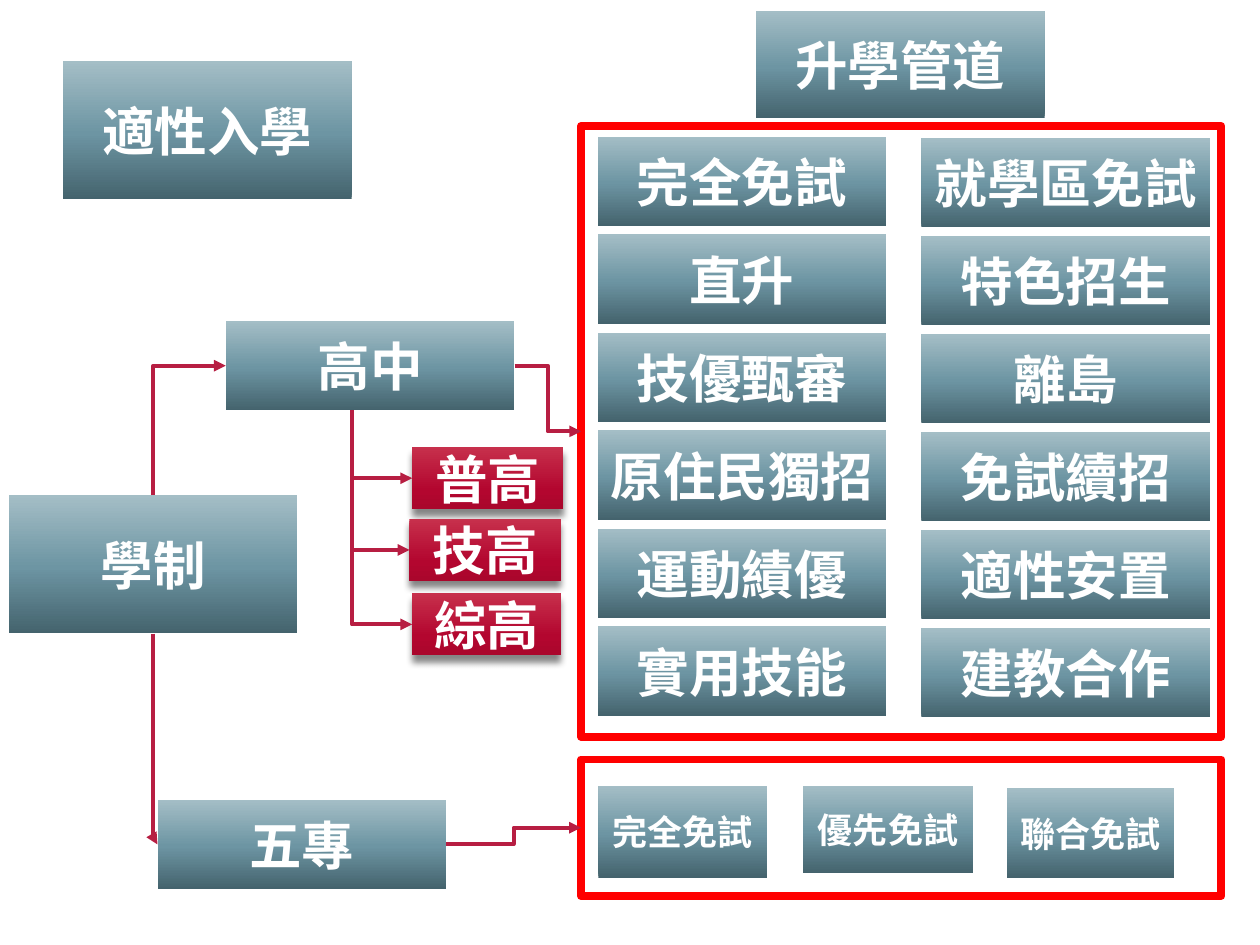
from dataclasses import dataclass

import pptx
import pptx.dml.color
import pptx.enum.shapes
import pptx.enum.text
import pptx.oxml
import pptx.oxml.ns
import pptx.util
from lxml import etree

Pt = pptx.util.Pt
qn = pptx.oxml.ns.qn
FONT = "Noto Sans CJK SC"
COLORS = {"text": "FFFFFF", "frame": "FF0000", "arrow": "B71E42", "shadow": "000000"}
GRADIENTS = {
    "teal": (90, ((0, "44636D"), (48, "6D95A3"), (100, "A4BEC6"))),
    "red": (270, ((0, "C7304C"), (69, "B3062F"), (100, "AA062C"))),
}


@dataclass(frozen=True)
class Box:
    text: str
    left: float
    top: float
    width: float = 165  # five 30-point characters plus the side insets
    height: float = 51
    size: int = 30
    gradient: str = "teal"

    @property
    def middle(self) -> float:
        return self.top + self.height / 2

    @property
    def center(self) -> float:
        return self.left + self.width / 2

    @property
    def bottom(self) -> float:
        return self.top + self.height


TITLE = Box("適性入學", 36, 35, height=79)
SYSTEM = Box("學制", 5, 283, height=79)
CHANNELS = Box("升學管道", 432, 6.5, height=61)
SENIOR_HIGH = Box("高中", 129, 183.5)
JUNIOR_COLLEGE = Box("五專", 90, 457)
SENIOR_FRAME = Box("", 332, 72, 366, 349)
COLLEGE_FRAME = Box("", 332, 434, 366, 78)
SCHOOL_TYPES = [
    Box("普高", 235.5, 255.5, 86.5, 35.5, gradient="red"),
    Box("技高", 234, 296.5, 86.5, 35.5, gradient="red"),
    Box("綜高", 235.5, 339, 85, 35.5, gradient="red"),
]
SENIOR_COLUMNS = [
    (341.5, 78, ["完全免試", "直升", "技優甄審", "原住民獨招", "運動績優", "實用技能"]),
    (526.5, 79, ["就學區免試", "特色招生", "離島", "免試續招", "適性安置", "建教合作"]),
]
ROW_PITCH = 56
COLLEGE_CHANNELS = [
    Box("完全免試", 342, 449, 96.5, 52.5, 20),
    Box("優先免試", 459, 449, 97, 50, 20),
    Box("聯合免試", 575.5, 450.5, 95.5, 51, 20),
]


def color(name: str) -> pptx.dml.color.RGBColor:
    return pptx.dml.color.RGBColor.from_string(COLORS[name])


def write_text(shape, text: str, *, size: int, bold: bool = True, fill: str = "text") -> None:
    frame = shape.text_frame
    frame.auto_size = pptx.enum.text.MSO_AUTO_SIZE.NONE
    frame.word_wrap = True
    frame.vertical_anchor = pptx.enum.text.MSO_ANCHOR.MIDDLE
    paragraph = frame.paragraphs[0]
    paragraph.alignment = pptx.enum.text.PP_ALIGN.CENTER
    run = paragraph.add_run()
    run.text = text
    run.font.size = Pt(size)
    run.font.bold = bold
    run.font.color.rgb = color(fill)
    run.font.name = FONT
    etree.SubElement(run._r.get_or_add_rPr(), qn("a:ea"), typeface=FONT)


def fill_gradient(shape, name: str) -> None:
    angle, stops = GRADIENTS[name]
    shape.fill.gradient()
    shape.fill.gradient_angle = angle
    stop_list = shape._element.spPr.find(qn("a:gradFill")).find(qn("a:gsLst"))
    for stop in list(stop_list):
        stop_list.remove(stop)
    for position, value in stops:
        stop = etree.SubElement(stop_list, qn("a:gs"), pos=str(position * 1000))
        etree.SubElement(stop, qn("a:srgbClr"), val=value)


def add_shadow(shape) -> None:
    effects = shape._element.spPr.find(qn("a:effectLst"))
    shadow = etree.SubElement(effects, qn("a:outerShdw"), blurRad=str(Pt(4)),
                              dist=str(Pt(4)), dir="5400000", rotWithShape="0")
    shade = etree.SubElement(shadow, qn("a:srgbClr"), val=COLORS["shadow"])
    etree.SubElement(shade, qn("a:alpha"), val="48000")


def add_rectangle(slide, box: Box):
    shape = slide.shapes.add_shape(
        pptx.enum.shapes.MSO_SHAPE.RECTANGLE,
        Pt(box.left), Pt(box.top), Pt(box.width), Pt(box.height))
    shape.shadow.inherit = False
    return shape


def format_box(shape, box: Box) -> None:
    fill_gradient(shape, box.gradient)
    shape.line.fill.background()
    write_text(shape, box.text, size=box.size)


def add_box(slide, box: Box):
    shape = add_rectangle(slide, box)
    format_box(shape, box)
    if box.gradient == "red":
        add_shadow(shape)
    return shape


def add_frame(slide, box: Box):
    shape = add_rectangle(slide, box)
    shape.fill.background()
    shape.line.color.rgb = color("frame")
    shape.line.width = Pt(4.5)
    return shape


def add_title(slide, box: Box) -> None:
    title = slide.shapes.title
    title.left, title.top = Pt(box.left), Pt(box.top)
    title.width, title.height = Pt(box.width), Pt(box.height)
    format_box(title, box)


def add_elbow(slide, x1: float, y1: float, x2: float, y2: float):
    connector = slide.shapes.add_connector(
        pptx.enum.shapes.MSO_CONNECTOR.ELBOW, Pt(x1), Pt(y1), Pt(x2), Pt(y2))
    connector.line.color.rgb = color("arrow")
    connector.line.width = Pt(2.25)
    properties = connector._element.spPr
    etree.SubElement(properties.find(qn("a:ln")), qn("a:tailEnd"), type="triangle")
    etree.SubElement(properties, qn("a:effectLst"))
    return connector


def add_step_arrow(slide, source, target) -> None:
    """Joins the right side of source to the left side of target."""
    connector = add_elbow(slide, 0, 0, 1, 1)
    connector.begin_connect(source, 3)
    connector.end_connect(target, 1)


def add_corner_arrow(slide, x1: float, y1: float, x2: float, y2: float) -> None:
    """Runs vertically from the start, then right to the end, as a turned one-bend connector."""
    center_x, center_y = (x1 + x2) / 2, (y1 + y2) / 2
    half_length, half_rise = abs(y2 - y1) / 2, (x2 - x1) / 2
    downward = y2 > y1
    if not downward:
        half_rise = -half_rise
    connector = add_elbow(slide, center_x + half_length, center_y - half_rise,
                          center_x - half_length, center_y + half_rise)
    properties = connector._element.spPr
    properties.find(qn("a:xfrm")).set("rot", "16200000" if downward else "5400000")
    properties.find(qn("a:prstGeom")).set("prst", "bentConnector2")


def main() -> None:
    presentation = pptx.Presentation()
    presentation.slide_width, presentation.slide_height = Pt(720), Pt(540)
    slide = presentation.slides.add_slide(presentation.slide_layouts[5])

    add_title(slide, TITLE)
    add_box(slide, SYSTEM)
    add_box(slide, CHANNELS)
    senior_high = add_box(slide, SENIOR_HIGH)
    junior_college = add_box(slide, JUNIOR_COLLEGE)
    for left, top, names in SENIOR_COLUMNS:
        for row, name in enumerate(names):
            add_box(slide, Box(name, left, top + row * ROW_PITCH))
    for box in COLLEGE_CHANNELS:
        add_box(slide, box)

    add_step_arrow(slide, senior_high, add_frame(slide, SENIOR_FRAME))
    add_step_arrow(slide, junior_college, add_frame(slide, COLLEGE_FRAME))
    for start, target in ((SYSTEM.bottom, JUNIOR_COLLEGE), (SYSTEM.top, SENIOR_HIGH)):
        add_corner_arrow(slide, SYSTEM.center, start, target.left, target.middle)

    for box in SCHOOL_TYPES:
        add_box(slide, box)
        add_corner_arrow(slide, 201, SENIOR_HIGH.bottom, box.left, box.middle)
    presentation.save("out.pptx")


if __name__ == "__main__":
    main()
